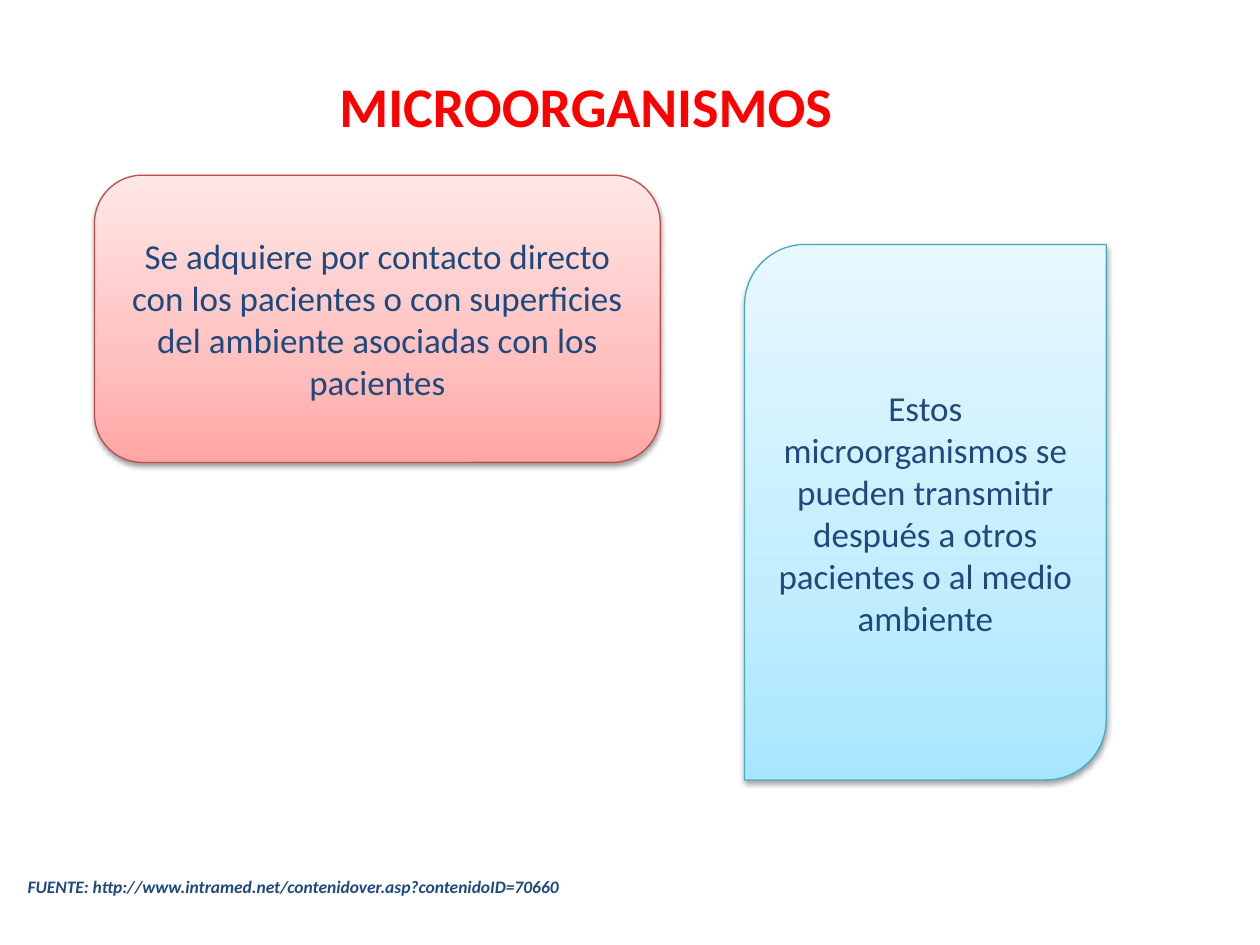
from dataclasses import dataclass

from lxml import etree
from pptx import Presentation
from pptx.dml.color import RGBColor
from pptx.enum import shapes, text
from pptx.oxml.ns import qn
from pptx.util import Emu, Inches, Pt

FONT = "Calibri"
RED = RGBColor(0xFF, 0x00, 0x00)
NAVY = RGBColor(0x1F, 0x49, 0x7D)
RED_LINE = RGBColor(0xBF, 0x4C, 0x48)
AQUA_LINE = RGBColor(0x46, 0xAA, 0xC5)
RED_STOPS = (RGBColor(0xFF, 0xA6, 0xA5), RGBColor(0xFF, 0xC0, 0xBF), RGBColor(0xFF, 0xE7, 0xE7))
AQUA_STOPS = (RGBColor(0xA7, 0xE6, 0xFF), RGBColor(0xC1, 0xED, 0xFF), RGBColor(0xE7, 0xF8, 0xFF))
STOP_PERCENTS = (0, 35, 100)


@dataclass
class Card:
    kind: shapes.MSO_SHAPE
    box: tuple[float, float, float, float]
    stops: tuple[RGBColor, ...]
    line: RGBColor
    words: str


CARDS = [
    Card(shapes.MSO_SHAPE.ROUNDED_RECTANGLE, (0.75, 1.39, 4.49, 2.28), RED_STOPS, RED_LINE,
         "Se adquiere por contacto directo con los pacientes o con superficies "
         "del ambiente asociadas con los pacientes"),
    Card(shapes.MSO_SHAPE.ROUND_2_DIAG_RECTANGLE, (5.91, 1.94, 2.87, 4.25), AQUA_STOPS, AQUA_LINE,
         "Estos microorganismos se pueden transmitir después a otros pacientes "
         "o al medio ambiente"),
]


def place(shape, box: tuple[float, float, float, float]) -> None:
    shape.left, shape.top, shape.width, shape.height = map(Inches, box)


def write(shape, words: str, size: int, color: RGBColor, align: text.PP_ALIGN,
          bold: bool = False, italic: bool = False) -> None:
    shape.text_frame.word_wrap = True
    paragraph = shape.text_frame.paragraphs[0]
    paragraph.alignment = align
    run = paragraph.add_run()
    run.text = words
    font = run.font
    font.name, font.size, font.bold, font.italic = FONT, Pt(size), bold, italic
    font.color.rgb = color


def add_gradient(shape, colors: tuple[RGBColor, ...]) -> None:
    shape.fill.gradient()
    shape.fill.gradient_angle = 90
    stop_list = shape._element.spPr.find(qn("a:gradFill")).find(qn("a:gsLst"))
    for stop in list(stop_list):
        stop_list.remove(stop)
    for percent, color in zip(STOP_PERCENTS, colors):
        stop = etree.SubElement(stop_list, qn("a:gs"), pos=str(percent * 1000))
        etree.SubElement(stop, qn("a:srgbClr"), val=str(color))


def add_shadow(shape) -> None:
    shape.shadow.inherit = False
    effects = shape._element.spPr.find(qn("a:effectLst"))
    shadow = etree.SubElement(effects, qn("a:outerShdw"), blurRad=str(Emu(40000)),
                              dist=str(Emu(20000)), dir="5400000", rotWithShape="0")
    color = etree.SubElement(shadow, qn("a:srgbClr"), val="000000")
    etree.SubElement(color, qn("a:alpha"), val="38000")


def add_card(slide, card: Card) -> None:
    shape = slide.shapes.add_shape(card.kind, *map(Inches, card.box))
    add_gradient(shape, card.stops)
    shape.line.color.rgb = card.line
    shape.line.width = Pt(0.75)
    add_shadow(shape)
    shape.text_frame.vertical_anchor = text.MSO_ANCHOR.MIDDLE
    write(shape, card.words, 20, NAVY, text.PP_ALIGN.CENTER)


def main() -> None:
    presentation = Presentation()
    presentation.slide_width, presentation.slide_height = Inches(10), Inches(7.5)
    slide = presentation.slides.add_slide(presentation.slide_layouts[5])

    # Title
    title = slide.shapes.title
    place(title, (0.67, 0.21, 7.96, 1.25))
    title.text_frame.vertical_anchor = text.MSO_ANCHOR.MIDDLE
    write(title, "MICROORGANISMOS", 32, RED, text.PP_ALIGN.CENTER, bold=True)

    # Cards
    for card in CARDS:
        add_card(slide, card)

    # Source line
    source = slide.shapes.add_textbox(*map(Inches, (0.12, 6.9, 9.21, 0.27)))
    write(source, "FUENTE: http://www.intramed.net/contenidover.asp?contenidoID=70660",
          10, NAVY, text.PP_ALIGN.LEFT, bold=True, italic=True)
    source.text_frame.auto_size = text.MSO_AUTO_SIZE.SHAPE_TO_FIT_TEXT

    presentation.save("out.pptx")


if __name__ == "__main__":
    main()
